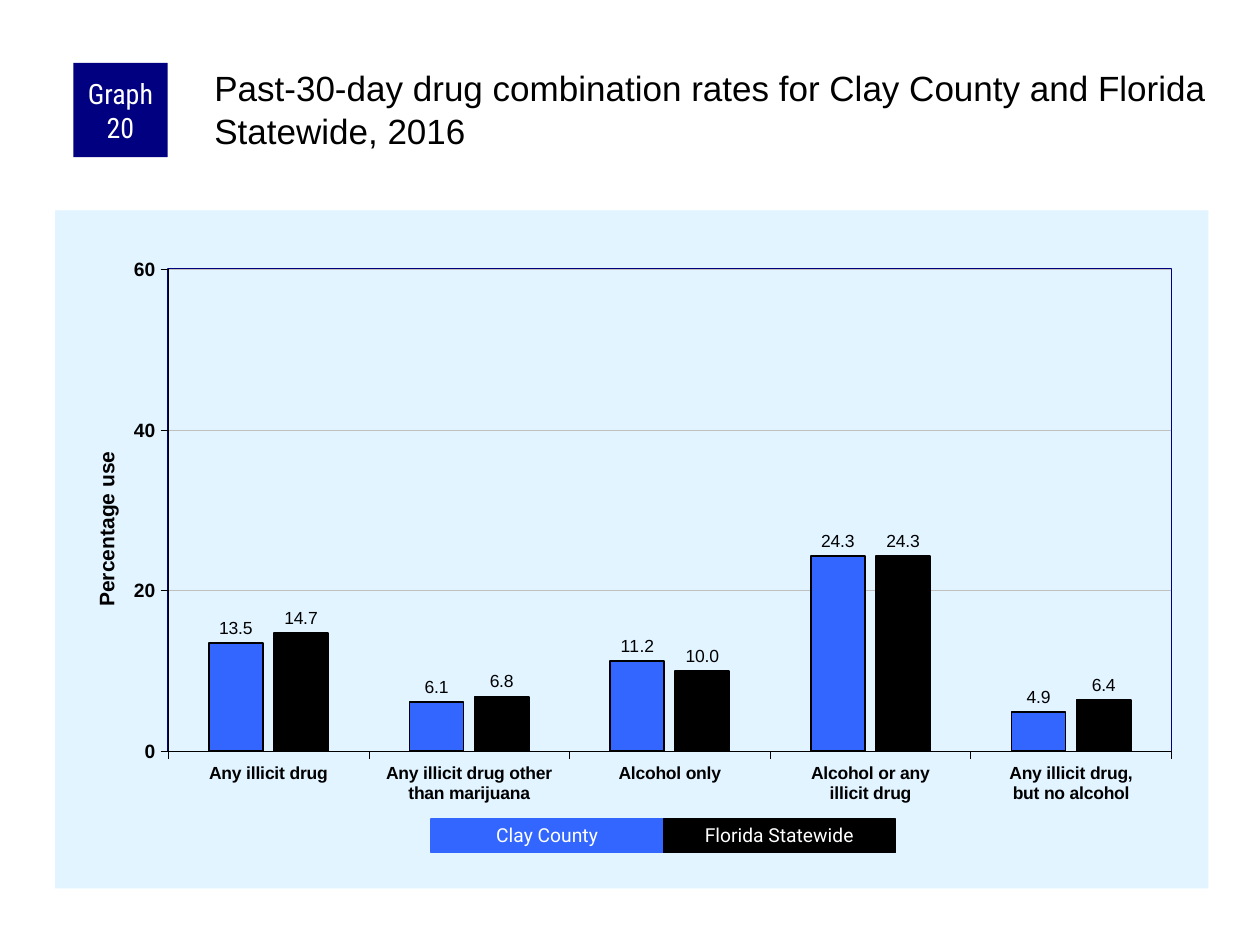
from dataclasses import dataclass

from lxml import etree
from pptx import Presentation
from pptx import util as u
from pptx.chart import data as chart_data
from pptx.dml import color as dml
from pptx.enum import chart as charts
from pptx.enum import shapes, text
from pptx.oxml import ns, parse_xml

NAVY, BLUE, BLACK, WHITE = "000080", "3366FF", "000000", "FFFFFF"
PALE_BLUE, GREY = "E1F4FF", "C0C0C0"


@dataclass
class Block:
    label: str
    left: float
    top: float
    width: float
    height: float
    fill: str
    size: float
    font: str
    line_width: float = 0
    spacing: float = 1.0
    inset: float = 0.13


@dataclass
class Series:
    name: str
    values: tuple
    fill: str


LEGEND_LEFT, LEGEND_WIDTH = 8.69, 4.68
SERIES = [
    Series("Clay County", (13.5, 6.1, 11.2, 24.3, 4.9), BLUE),
    Series("Florida Statewide", (14.7, 6.8, 10.0, 24.3, 6.4), BLACK),
]
CATEGORIES = [
    "Any illicit drug",
    "Any illicit drug other than marijuana",
    "Alcohol only",
    "Alcohol or any\nillicit drug",
    "Any illicit drug,\nbut no alcohol",
]


def rgb(value: str) -> dml.RGBColor:
    return dml.RGBColor.from_string(value)


def set_fill(fill, value: str) -> None:
    fill.solid()
    fill.fore_color.rgb = rgb(value)


def set_line(line, value: str, width: float) -> None:
    set_fill(line.fill, value)
    line.width = u.Pt(width)


def set_font(font, *, size: float, name: str = "Arial", color: str = BLACK, bold: bool = False) -> None:
    font.size = u.Pt(size)
    font.name = name
    font.bold = bold
    font.color.rgb = rgb(color)


def write_text(frame, content: str, *, align=text.PP_ALIGN.LEFT, anchor=text.MSO_ANCHOR.TOP,
               insets=(0, 0, 0, 0), spacing: float = 1.0, **font_format) -> None:
    frame.auto_size = text.MSO_AUTO_SIZE.NONE
    frame.word_wrap = True
    frame.vertical_anchor = anchor
    frame.margin_left, frame.margin_top, frame.margin_right, frame.margin_bottom = map(u.Cm, insets)
    paragraph = frame.paragraphs[0]
    paragraph.alignment = align
    paragraph.line_spacing = spacing
    run = paragraph.add_run()
    run.text = content
    set_font(run.font, **font_format)


def add_block(slide, block: Block) -> None:
    shape = slide.shapes.add_shape(
        shapes.MSO_SHAPE.RECTANGLE,
        u.Cm(block.left), u.Cm(block.top), u.Cm(block.width), u.Cm(block.height))
    shape.shadow.inherit = False
    set_fill(shape.fill, block.fill)
    if block.line_width:
        set_line(shape.line, block.fill, block.line_width)
    else:
        shape.line.fill.background()
    write_text(shape.text_frame, block.label, align=text.PP_ALIGN.CENTER,
               anchor=text.MSO_ANCHOR.MIDDLE, insets=(block.inset, 0, block.inset, 0),
               spacing=block.spacing, size=block.size, name=block.font, color=WHITE)


def set_layout(parent, position: int, **values) -> None:
    for old in parent.findall(ns.qn("c:layout")):
        parent.remove(old)
    layout = etree.Element(ns.qn("c:layout"))
    manual = etree.SubElement(layout, ns.qn("c:manualLayout"))
    for tag, value in values.items():
        etree.SubElement(manual, ns.qn(f"c:{tag}"), val=str(value))
    parent.insert(position, layout)


def area_format(fill: str, line: str):
    return parse_xml(f"<c:spPr {ns.nsdecls('c', 'a')}>{fill}{line}</c:spPr>")


def solid(value: str) -> str:
    return f'<a:solidFill><a:srgbClr val="{value}"/></a:solidFill>'


def format_axis(axis, size: float) -> None:
    axis.major_tick_mark = charts.XL_TICK_MARK.OUTSIDE
    axis.minor_tick_mark = charts.XL_TICK_MARK.NONE
    set_font(axis.tick_labels.font, size=size, bold=True)
    set_line(axis.format.line, BLACK, 0.25)


def add_usage_chart(slide) -> None:
    source = chart_data.CategoryChartData(number_format="0.0")
    source.categories = CATEGORIES
    for item in SERIES:
        source.add_series(item.name, item.values)
    chart = slide.shapes.add_chart(
        charts.XL_CHART_TYPE.COLUMN_CLUSTERED,
        u.Cm(1.11), u.Cm(4.24), u.Cm(23.25), u.Cm(13.67), source).chart
    chart.has_title = False
    chart.has_legend = False
    set_font(chart.font, size=11.5)

    plot = chart.plots[0]
    plot.gap_width, plot.overlap, plot.vary_by_categories = 150, -20, False
    for series, item in zip(plot.series, SERIES):
        set_fill(series.format.fill, item.fill)
        set_line(series.format.line, BLACK, 1)
        labels = series.data_labels
        labels.show_value = True
        labels.number_format, labels.number_format_is_linked = "0.0", False
        labels.position = charts.XL_LABEL_POSITION.OUTSIDE_END
        set_font(labels.font, size=10)

    format_axis(chart.category_axis, 10)
    value_axis = chart.value_axis
    format_axis(value_axis, 11)
    value_axis.minimum_scale, value_axis.maximum_scale, value_axis.major_unit = 0, 60, 20
    value_axis.tick_labels.number_format = "0"
    value_axis.tick_labels.number_format_is_linked = False
    value_axis.has_major_gridlines = True
    set_line(value_axis.major_gridlines.format.line, GREY, 0.25)

    title_frame = value_axis.axis_title.text_frame
    run = title_frame.paragraphs[0].add_run()
    run.text = "Percentage use"
    set_font(run.font, size=12, bold=True)
    title_frame._txBody.bodyPr.set("rot", "-5400000")
    title = value_axis._element.find(ns.qn("c:title"))
    set_layout(title, 1, xMode="edge", yMode="edge", x=0.03, y=0.35)

    chart_element = chart._chartSpace.find(ns.qn("c:chart"))
    chart_element.addnext(area_format(solid(PALE_BLUE), "<a:ln><a:noFill/></a:ln>"))
    plot_area = chart_element.find(ns.qn("c:plotArea"))
    set_layout(plot_area, 0, layoutTarget="inner", xMode="edge", yMode="edge",
               x=0.098, y=0.087, w=0.87, h=0.711)
    plot_area.append(area_format("<a:noFill/>", f'<a:ln w="12700">{solid(NAVY)}</a:ln>'))


def main() -> None:
    presentation = Presentation()
    presentation.slide_width, presentation.slide_height = u.Cm(25.4), u.Cm(19.05)
    slide = presentation.slides.add_slide(presentation.slide_layouts[5])

    title = slide.shapes.title
    title.left, title.top, title.width, title.height = map(u.Cm, (4.24, 1.27, 20.12, 2.11))
    write_text(title.text_frame,
               "Past-30-day drug combination rates for Clay County and Florida Statewide, 2016",
               insets=(0.08, 0.08, 0, 0), size=20)

    add_usage_chart(slide)
    add_block(slide, Block("Graph 20", 1.48, 1.27, 1.9, 1.9, NAVY, 16, "Roboto Condensed"))
    for index, item in enumerate(SERIES):
        add_block(slide, Block(item.name, LEGEND_LEFT + index * LEGEND_WIDTH, 16.51,
                               LEGEND_WIDTH, 0.68, item.fill, 11, "Roboto",
                               line_width=0.75, spacing=0.9, inset=0.25))
    presentation.save("out.pptx")


if __name__ == "__main__":
    main()
